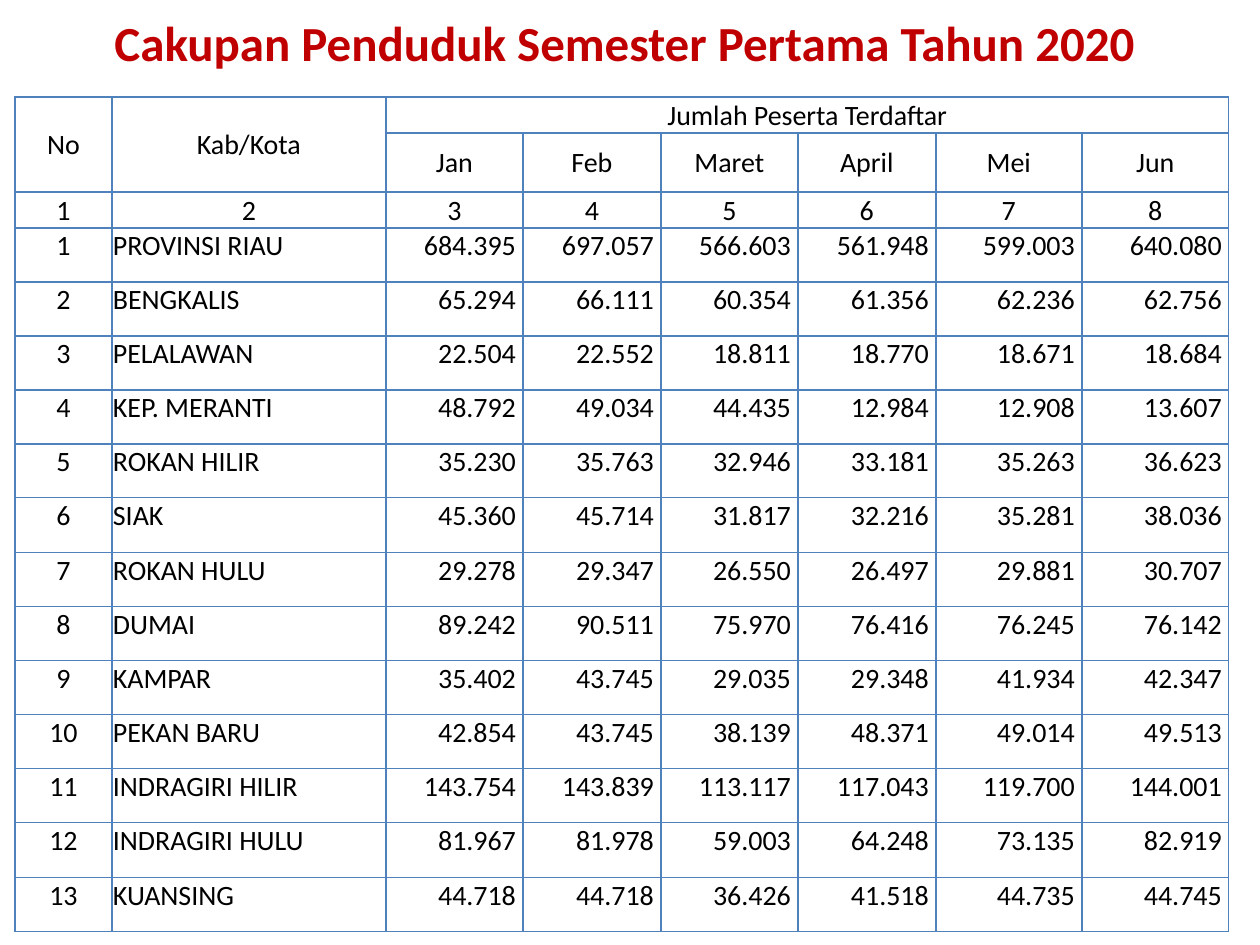
from typing import NamedTuple

from pptx import Presentation
from pptx import util as u
from pptx.dml.color import RGBColor
from pptx.enum import text
from pptx.oxml import parse_xml
from pptx.oxml.ns import nsdecls

PX = u.Inches(1) / 126
FONT = "Calibri"
BLACK = RGBColor(0x00, 0x00, 0x00)
RED = RGBColor(0xC0, 0x00, 0x00)
BLUE = RGBColor(0x4F, 0x81, 0xBD)
LEFT, CENTER, RIGHT = text.PP_ALIGN.LEFT, text.PP_ALIGN.CENTER, text.PP_ALIGN.RIGHT
TOP, MIDDLE = text.MSO_ANCHOR.TOP, text.MSO_ANCHOR.MIDDLE


class District(NamedTuple):
    name: str
    counts: tuple[str, ...]


class CellStyle(NamedTuple):
    align: text.PP_ALIGN
    anchor: text.MSO_ANCHOR = TOP
    right_margin: int = 1


HEADER = CellStyle(CENTER, MIDDLE)
NUMBER = CellStyle(CENTER)
NAME = CellStyle(LEFT)
COUNT = CellStyle(RIGHT, right_margin=7)

MONTHS = ("Jan", "Feb", "Maret", "April", "Mei", "Jun")
DISTRICTS = (
    District("PROVINSI RIAU", ("684.395", "697.057", "566.603", "561.948", "599.003", "640.080")),
    District("BENGKALIS", ("65.294", "66.111", "60.354", "61.356", "62.236", "62.756")),
    District("PELALAWAN", ("22.504", "22.552", "18.811", "18.770", "18.671", "18.684")),
    District("KEP. MERANTI", ("48.792", "49.034", "44.435", "12.984", "12.908", "13.607")),
    District("ROKAN HILIR", ("35.230", "35.763", "32.946", "33.181", "35.263", "36.623")),
    District("SIAK", ("45.360", "45.714", "31.817", "32.216", "35.281", "38.036")),
    District("ROKAN HULU", ("29.278", "29.347", "26.550", "26.497", "29.881", "30.707")),
    District("DUMAI", ("89.242", "90.511", "75.970", "76.416", "76.245", "76.142")),
    District("KAMPAR", ("35.402", "43.745", "29.035", "29.348", "41.934", "42.347")),
    District("PEKAN BARU", ("42.854", "43.745", "38.139", "48.371", "49.014", "49.513")),
    District("INDRAGIRI HILIR", ("143.754", "143.839", "113.117", "117.043", "119.700", "144.001")),
    District("INDRAGIRI HULU", ("81.967", "81.978", "59.003", "64.248", "73.135", "82.919")),
    District("KUANSING", ("44.718", "44.718", "36.426", "41.518", "44.735", "44.745")),
)
COLUMN_WIDTHS = (97, 274, 137, 138, 137, 138, 146, 147)
# Every sixth district row takes one extra pixel
ROW_HEIGHTS = (36, 59, 36) + tuple(
    55 if number % 6 == 0 else 54 for number in range(1, len(DISTRICTS) + 1)
)


def px(length: int) -> u.Emu:
    return u.Emu(round(length * PX))


def add_span(para, words: str, size: int, color: RGBColor, bold: bool = False) -> None:
    span = para.add_run()
    span.text = words
    span.font.name = FONT
    span.font.size = u.Pt(size)
    span.font.bold = bold
    span.font.color.rgb = color


def add_title(page, words: str) -> None:
    box = page.shapes.add_textbox(px(15), px(6), px(1230), px(90))
    box.text_frame.word_wrap = True
    para = box.text_frame.paragraphs[0]
    para.alignment = CENTER
    add_span(para, words, 28, RED, bold=True)


def frame_cell(cell) -> None:
    """Clear the fill and rule all four sides."""
    properties = cell._tc.get_or_add_tcPr()
    for side in ("lnL", "lnR", "lnT", "lnB"):
        properties.append(parse_xml(
            f'<a:{side} {nsdecls("a")} w="{u.Pt(1)}"><a:solidFill>'
            f'<a:srgbClr val="{BLUE}"/></a:solidFill></a:{side}>'
        ))
    cell.fill.background()


def write_cell(cell, words: str, style: CellStyle) -> None:
    cell.vertical_anchor = style.anchor
    para = cell.text_frame.paragraphs[0]
    para.alignment = style.align
    cell.margin_right = px(style.right_margin)
    add_span(para, words, 16, BLACK)


def add_coverage_table(page) -> None:
    table = page.shapes.add_table(
        len(ROW_HEIGHTS), len(COLUMN_WIDTHS), px(15), px(97),
        px(sum(COLUMN_WIDTHS)), px(sum(ROW_HEIGHTS)),
    ).table
    table.first_row = table.horz_banding = False
    for column, width in zip(table.columns, COLUMN_WIDTHS):
        column.width = px(width)
    for row, height in zip(table.rows, ROW_HEIGHTS):
        row.height = px(height)
    for cell in table.iter_cells():
        cell.margin_left = cell.margin_right = cell.margin_top = px(1)
        cell.margin_bottom = 0
        frame_cell(cell)

    # Two-level heading
    table.cell(0, 0).merge(table.cell(1, 0))
    table.cell(0, 1).merge(table.cell(1, 1))
    table.cell(0, 2).merge(table.cell(0, 7))
    for column, words in enumerate(("No", "Kab/Kota", "Jumlah Peserta Terdaftar")):
        write_cell(table.cell(0, column), words, HEADER)
    for column, month in enumerate(MONTHS, start=2):
        write_cell(table.cell(1, column), month, HEADER)
    for column in range(len(COLUMN_WIDTHS)):
        write_cell(table.cell(2, column), str(column + 1), HEADER)

    # One row per district
    for number, district in enumerate(DISTRICTS, start=1):
        row = number + 2
        write_cell(table.cell(row, 0), str(number), NUMBER)
        write_cell(table.cell(row, 1), district.name, NAME)
        for column, count in enumerate(district.counts, start=2):
            write_cell(table.cell(row, column), count, COUNT)


def main() -> None:
    deck = Presentation()
    deck.slide_width, deck.slide_height = u.Inches(10), u.Inches(7.5)
    page = deck.slides.add_slide(deck.slide_layouts[6])
    add_coverage_table(page)
    add_title(page, "Cakupan Penduduk Semester Pertama Tahun 2020 ")
    deck.save("out.pptx")


if __name__ == "__main__":
    main()
